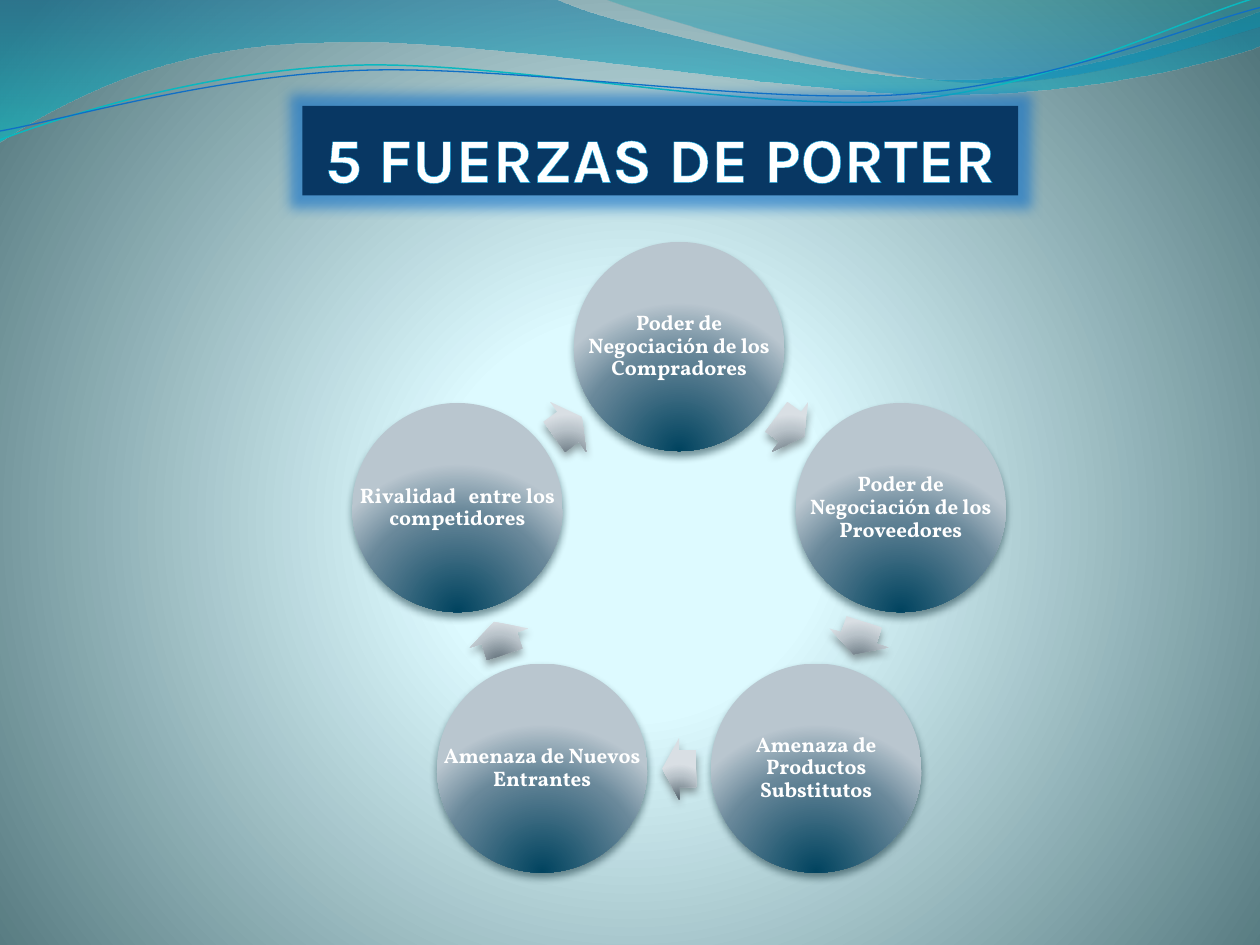
from math import cos, radians, sin

from lxml import etree
from pptx import Presentation
from pptx.dml.color import RGBColor
from pptx.enum.shapes import MSO_SHAPE
from pptx.enum.text import MSO_ANCHOR, MSO_AUTO_SIZE, PP_ALIGN
from pptx.oxml import parse_xml
from pptx.oxml.ns import nsdecls, qn
from pptx.util import Inches, Pt

ELLIPSE, ARROW = MSO_SHAPE.OVAL, MSO_SHAPE.RIGHT_ARROW
CENTER = PP_ALIGN.CENTER
MIDDLE, BOTTOM = MSO_ANCHOR.MIDDLE, MSO_ANCHOR.BOTTOM

RING_X, RING_Y = 5.39, 4.6
CIRCLE_RADIUS, ARROW_RADIUS = 1.85, 1.5
CIRCLE_W, CIRCLE_H = 1.67, 1.66
ARROW_W, ARROW_H = 0.27, 0.49

FORCES = [
    "Poder de Negociación de los Compradores",
    "Poder de Negociación de los Proveedores",
    "Amenaza de Productos Substitutos",
    "Amenaza de Nuevos Entrantes",
    "Rivalidad   entre los competidores",
]

# Each wave: start point, then cubic segments (6 numbers) or straight ones (2)
WAVE_BACK = [(0, -0.01), (4.4, -0.01),
             (4.76, 0.17, 6.64, 0.63, 7.58, 0.63),
             (8.53, 0.63, 9.58, 0.26, 10, 0.09), (10.01, 0.36),
             (9.83, 0.44, 8.7, 0.76, 7.46, 0.75),
             (6.22, 0.75, 3.82, 0.28, 2.57, 0.34),
             (1.29, 0.35, 0.46, 0.83, -0.01, 1.13), (0, -0.01)]
WAVE_RIGHT = [(4.79, -0.01), (5.09, 0.11, 6.82, 0.62, 7.69, 0.65),
              (8.56, 0.69, 9.61, 0.32, 10, 0.21), (10, 0), (4.79, -0.01)]
LINE_TEAL = [(0, 1.11), (0.48, 0.93, 1.58, 0.57, 2.77, 0.52),
             (3.95, 0.47, 5.93, 0.89, 7.13, 0.8),
             (8.33, 0.71, 9.38, 0.15, 9.98, -0.02)]
LINE_BLUE = [(0, 1.04), (0.47, 0.96, 1.64, 0.61, 2.83, 0.56),
             (4.03, 0.51, 5.97, 0.83, 7.17, 0.75),
             (8.36, 0.67, 9.41, 0.21, 10, 0.06)]

BALL = [(0, "00435F"), (68, "69889A"), (100, "B9C6CF")]
METAL = [(0, "576771"), (68, "B9C3CA"), (100, "D9DFE4")]
BELOW = (50, 130, 50, -30)


def rgb(color):
    return RGBColor.from_string(color)


def color_xml(color, alpha=100):
    return f'<a:srgbClr val="{color}"><a:alpha val="{alpha * 1000}"/></a:srgbClr>'


def set_gradient(parent, stops, focus=None):
    """Replace the empty fill of parent; focus (l, t, r, b) makes it circular."""
    gs = "".join(f'<a:gs pos="{pos * 1000}">{color_xml(*color)}</a:gs>'
                 for pos, *color in stops)
    if focus:
        l, t, r, b = (v * 1000 for v in focus)
        kind = (f'<a:path path="circle"><a:fillToRect l="{l}" t="{t}" '
                f'r="{r}" b="{b}"/></a:path>')
    else:
        kind = '<a:lin ang="5400000" scaled="1"/>'
    fill = parse_xml(f'<a:gradFill {nsdecls("a")} rotWithShape="1">'
                     f'<a:gsLst>{gs}</a:gsLst>{kind}</a:gradFill>')
    parent.replace(parent.find(qn("a:noFill")), fill)


def add_effect(sp, tag, color, alpha, **attrs):
    sp.shadow.inherit = False
    effects = sp._element.spPr.find(qn("a:effectLst"))
    effect = etree.SubElement(effects, qn(tag), {k: str(v) for k, v in attrs.items()})
    effect.append(parse_xml(color_xml(color, alpha).replace(
        "<a:srgbClr", f'<a:srgbClr {nsdecls("a")}', 1)))


def bend(sp, segments):
    """Join each three lines that stand for a cubic segment into one curve."""
    lines = iter(list(sp._element.iter(qn("a:lnTo"))))
    for seg in segments:
        first = next(lines)
        if len(seg) == 6:
            first.tag = qn("a:cubicBezTo")
            for line in (next(lines), next(lines)):
                first.append(line[0])
                line.getparent().remove(line)


def ring_box(angle, radius, w, h):
    """Box centred on the ring, angle clockwise from the top."""
    a = radians(angle)
    return [Inches(v) for v in (RING_X + radius * sin(a) - w / 2,
                                RING_Y - radius * cos(a) - h / 2, w, h)]


def set_text(sp, text, font, size, anchor, insets, color="FFFFFF",
             line_spacing=None, space_after=0):
    tf = sp.text_frame
    tf.word_wrap = True
    tf.auto_size = MSO_AUTO_SIZE.NONE
    tf.vertical_anchor = anchor
    tf.margin_left, tf.margin_top, tf.margin_right, tf.margin_bottom = map(Inches, insets)
    p = tf.paragraphs[0]
    p.alignment = CENTER
    p.line_spacing = line_spacing
    p.space_after = Pt(space_after)
    r = p.add_run()
    r.text = text
    r.font.name, r.font.size, r.font.bold = font, Pt(size), True
    r.font.color.rgb = rgb(color)
    return r


class Deck:
    title_font, body_font = "Karla", "Vollkorn"

    def __init__(self, prs):
        self.s = prs.slides.add_slide(prs.slide_layouts[5])

    def background(self, stops, focus):
        self.s.background.fill.background()
        set_gradient(self.s._element.find(".//" + qn("p:bgPr")), stops, focus)

    def wave(self, path, stops=None, line=None, width=0):
        start, *segments = path
        points = [(Inches(seg[i]), Inches(seg[i + 1]))
                  for seg in segments for i in range(0, len(seg), 2)]
        fb = self.s.shapes.build_freeform(*map(Inches, start))
        fb.add_line_segments(points, close=stops is not None)
        sp = fb.convert_to_shape()
        bend(sp, segments)
        sp.shadow.inherit = False
        sp.fill.background()
        if stops:
            set_gradient(sp._element.spPr, stops)
            sp.line.fill.background()
        else:
            sp.line.color.rgb = rgb(line)
            sp.line.width = Pt(width)

    def title(self, text):
        sp = self.s.shapes.title
        self.s.shapes._spTree.append(sp._element)  # in front of the waves
        sp.left, sp.top, sp.width, sp.height = map(Inches, (2.4, 0.84, 5.68, 0.71))
        sp.fill.solid()
        sp.fill.fore_color.rgb = rgb("083763")
        add_effect(sp, "a:glow", "0F6FC6", 60, rad=Pt(14))
        r = set_text(sp, text, self.title_font, 36, BOTTOM, (0, 0.05, 0, 0))
        r.font._element.insert(0, parse_xml(
            f'<a:ln {nsdecls("a")} w="{Pt(1.42)}"><a:solidFill>'
            f'{color_xml("009DD9")}</a:solidFill></a:ln>'))

    def glossy(self, shape, box, stops, shadow):
        sp = self.s.shapes.add_shape(shape, *box)
        sp.fill.background()
        sp.line.fill.background()
        set_gradient(sp._element.spPr, stops, BELOW)
        add_effect(sp, "a:outerShdw", shadow, 48, blurRad=Pt(4.5), dist=Pt(3),
                   dir=5400000, rotWithShape=0)
        return sp

    def force(self, text, angle):
        box = ring_box(angle, CIRCLE_RADIUS, CIRCLE_W, CIRCLE_H)
        self.glossy(ELLIPSE, box, BALL, "00232C")
        set_text(self.s.shapes.add_textbox(*box), text, self.body_font, 12, MIDDLE,
                 [0.02] * 4, line_spacing=0.9, space_after=4.2)

    def arrow(self, angle):
        box = ring_box(angle, ARROW_RADIUS, ARROW_W, ARROW_H)
        sp = self.glossy(ARROW, box, METAL, "3C4043")
        sp.adjustments[0], sp.adjustments[1] = 0.6, 0.5
        sp.rotation = angle


def main():
    prs = Presentation()
    prs.slide_width, prs.slide_height = Inches(10), Inches(7.5)
    deck = Deck(prs)
    deck.background([(0, "DEFBFF"), (25, "DDFAFF"), (100, "52767C")], (10, 110, 10, 100))
    deck.wave(WAVE_BACK, [(0, "0074A1", 45), (100, "00C6CF", 55)])
    deck.wave(WAVE_RIGHT, [(0, "00A1A9", 30), (80, "008BBF", 45)])
    deck.wave(LINE_TEAL, line="0AB8BF", width=0.85)
    deck.wave(LINE_BLUE, line="0F6FC6", width=0.75)
    deck.title("5 FUERZAS DE PORTER")
    step = 360 / len(FORCES)
    for i, text in enumerate(FORCES):
        deck.force(text, i * step)
        deck.arrow((i + 0.5) * step)
    prs.save("out.pptx")


if __name__ == "__main__":
    main()
